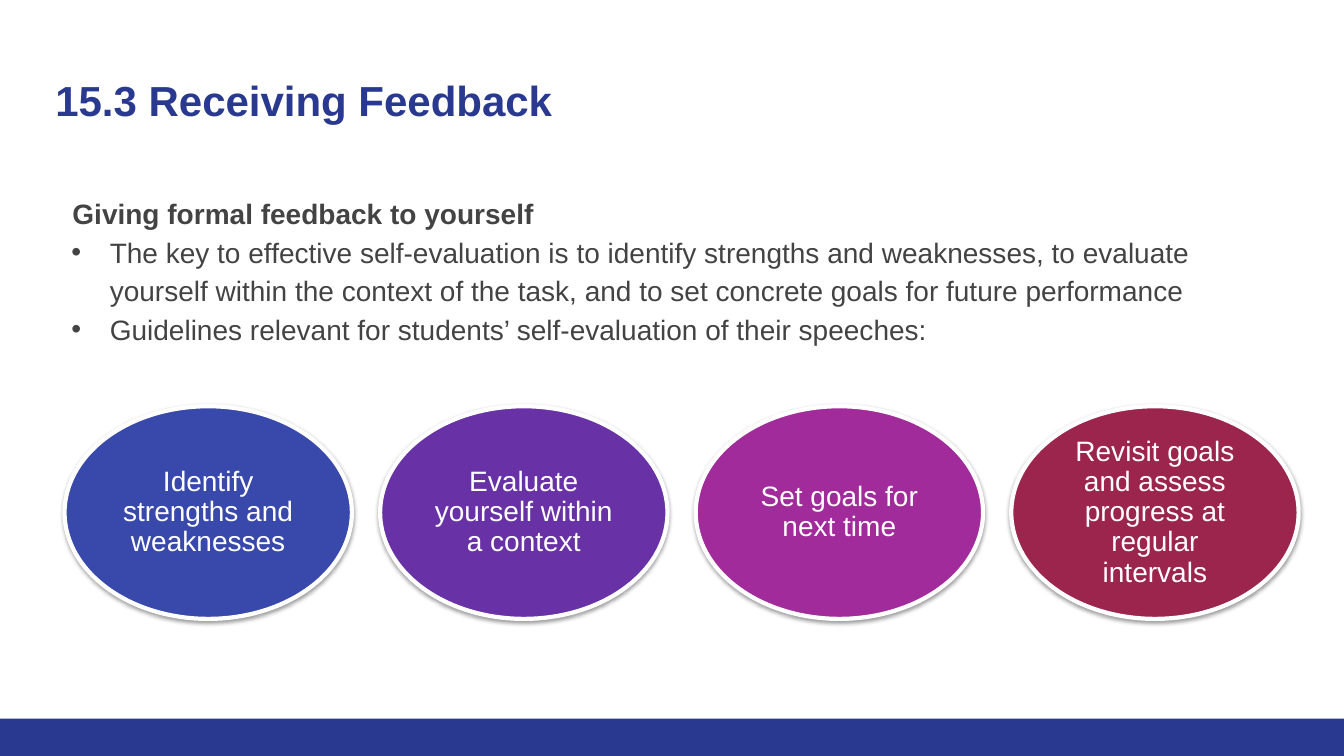
from dataclasses import dataclass

from lxml.etree import SubElement
from pptx import Presentation
from pptx.dml.color import RGBColor
from pptx.enum.shapes import MSO_SHAPE
from pptx.enum.text import MSO_ANCHOR, PP_ALIGN
from pptx.oxml import parse_xml
from pptx.oxml.ns import nsdecls, qn
from pptx.util import Pt

PX = 9144  # EMU per px, 100 px to the inch
NAVY, GREY, WHITE = "2A3990", "434343", "FFFFFF"
STEP_PITCH = 313


@dataclass
class Line:
    text: str
    bold: bool = False
    bullet: bool = False


@dataclass
class Step:
    text: str
    fill: str


BODY = [
    Line("Giving formal feedback to yourself", bold=True),
    Line("The key to effective self-evaluation is to identify strengths and weaknesses, "
         "to evaluate yourself within the context of the task, and to set concrete goals "
         "for future performance", bullet=True),
    Line("Guidelines relevant for students’ self-evaluation of their speeches:", bullet=True),
]
STEPS = [
    Step("Identify strengths and weaknesses", "3949AB"),
    Step("Evaluate yourself within a context", "6832A6"),
    Step("Set goals for next time", "A12B9A"),
    Step("Revisit goals and assess progress at regular intervals", "9C254D"),
]


def px(length: int) -> int:
    return length * PX


def color(value: str) -> RGBColor:
    return RGBColor.from_string(value)


def set_frame(frame, inset: int, **settings) -> None:
    sides = ("margin_left", "margin_top", "margin_right", "margin_bottom")
    values = {"word_wrap": True, **dict.fromkeys(sides, px(inset)), **settings}
    for name, value in values.items():
        setattr(frame, name, value)


def add_span(para, text: str, size: int, ink: str, bold: bool = False) -> None:
    span = para.add_run()
    span.text = text
    for name, value in {"name": "Arial", "size": Pt(size), "bold": bold}.items():
        setattr(span.font, name, value)
    span.font.color.rgb = color(ink)


def add_shape(page, kind: MSO_SHAPE, bounds: tuple[int, int, int, int], fill: str):
    shape = page.shapes.add_shape(kind, *map(px, bounds))
    shape.shadow.inherit = False
    shape.fill.solid()
    shape.fill.fore_color.rgb = color(fill)
    shape.line.fill.background()
    return shape


def add_soft_shadow(shape) -> None:
    effects = shape._element.spPr.find(qn("a:effectLst"))
    effects.append(parse_xml(
        f'<a:outerShdw {nsdecls("a")} blurRad="40000" dist="20000" dir="5400000" '
        'rotWithShape="0"><a:srgbClr val="000000"><a:alpha val="38000"/>'
        '</a:srgbClr></a:outerShdw>'))


def indent(para, bullet: bool) -> None:
    properties = para._p.get_or_add_pPr()
    left, first = (54, -38) if bullet else (17, 0)
    properties.set("marL", str(px(left)))
    properties.set("indent", str(px(first)))
    if bullet:
        SubElement(properties, qn("a:buFont"), typeface="Arial")
        SubElement(properties, qn("a:buChar"), char="•")


def add_title(page, text: str) -> None:
    box = page.shapes.add_textbox(*map(px, (45, 60, 1242, 89)))
    set_frame(box.text_frame, 10, margin_top=px(14))
    add_span(box.text_frame.paragraphs[0], text, 30, NAVY, bold=True)


def add_body(page, lines: list[Line]) -> None:
    box = page.shapes.add_textbox(*map(px, (45, 180, 1242, 173)))
    frame = box.text_frame
    set_frame(frame, 10)
    for number, line in enumerate(lines):
        para = frame.add_paragraph() if number else frame.paragraphs[0]
        indent(para, line.bullet)
        para.line_spacing = 1.15
        add_span(para, line.text, 20, GREY, line.bold)


def add_step(page, step: Step, left: int) -> None:
    oval = add_shape(page, MSO_SHAPE.OVAL, (left, 403, 285, 211), step.fill)
    oval.line.color.rgb = color(WHITE)
    oval.line.width = Pt(3)
    add_soft_shadow(oval)
    set_frame(oval.text_frame, 8, vertical_anchor=MSO_ANCHOR.MIDDLE)
    para = oval.text_frame.paragraphs[0]
    para.alignment = PP_ALIGN.CENTER
    para.line_spacing = 0.9
    add_span(para, step.text, 20, WHITE)


def main() -> None:
    deck = Presentation()
    deck.slide_width, deck.slide_height = px(1333), px(750)
    page = deck.slides.add_slide(deck.slide_layouts[6])
    add_shape(page, MSO_SHAPE.RECTANGLE, (0, 713, 1333, 37), NAVY)
    add_title(page, "15.3 Receiving Feedback")
    add_body(page, BODY)
    for number, step in enumerate(STEPS):
        add_step(page, step, 64 + number * STEP_PITCH)
    deck.save("out.pptx")


if __name__ == "__main__":
    main()
